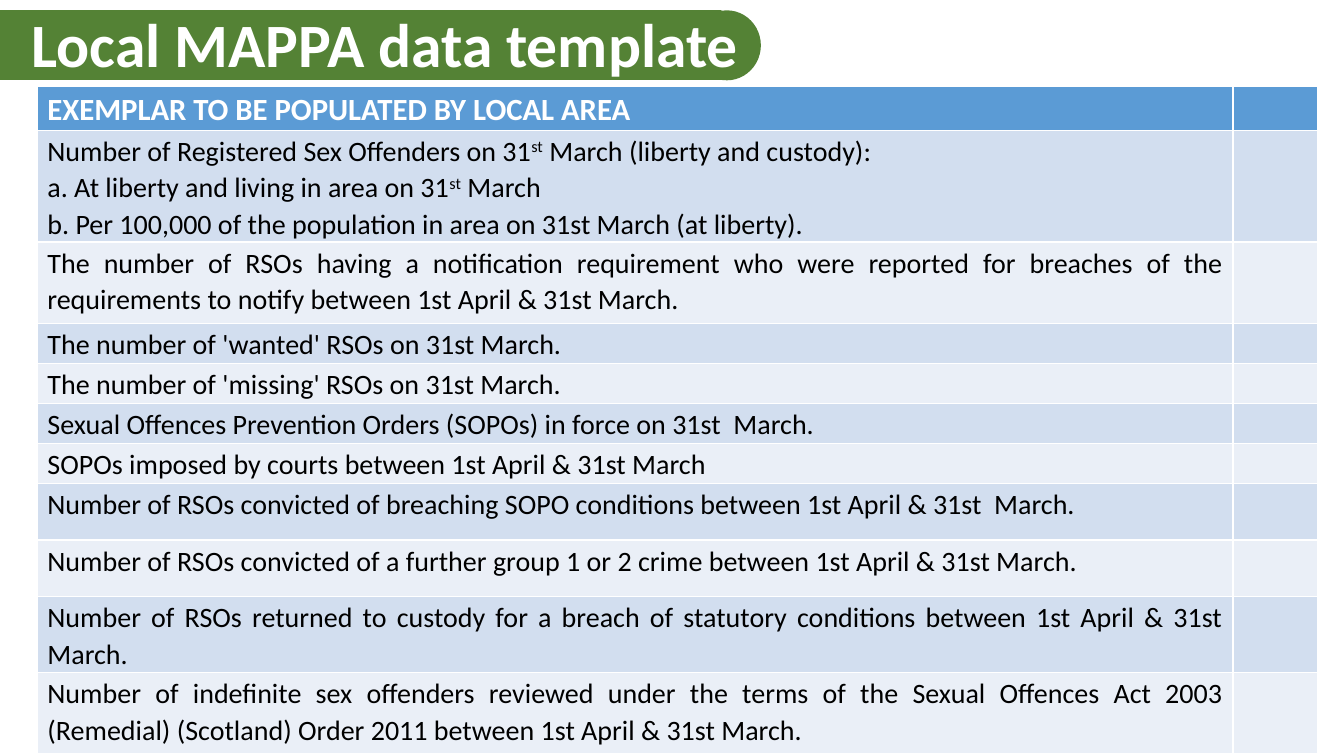
from pptx import Presentation
from pptx.dml.color import RGBColor
from pptx.enum.shapes import MSO_SHAPE as Preset
from pptx.enum.text import MSO_ANCHOR as Anchor, PP_ALIGN as Align
from pptx.util import Emu, Pt

# Content: ^ marks the edges of superscript text
TITLE = "Local MAPPA data template"
HEADING = "EXEMPLAR TO BE POPULATED BY LOCAL AREA"
MEASURES = [
    (106, ["Number of Registered Sex Offenders on 31^st^ March (liberty and custody): ",
           "a. At liberty and living in area on 31^st^ March ",
           "b. Per 100,000 of the population in area on 31st March (at liberty)."]),
    (81, ["The number of RSOs having a notification requirement who were reported "
          "for breaches of the requirements to notify between 1st April & 31st March."]),
    (37, ["The number of 'wanted' RSOs on 31st March."]),
    (37, ["The number of 'missing' RSOs on 31st March."]),
    (37, ["Sexual Offences Prevention Orders (SOPOs) in force on 31st  March."]),
    (37, ["SOPOs imposed by courts between 1st April & 31st March"]),
    (56, ["Number of RSOs convicted of breaching SOPO conditions between "
          "1st April & 31st  March."]),
    (56, ["Number of RSOs convicted of a further group 1 or 2 crime between "
          "1st April & 31st March."]),
    (72, ["Number of RSOs returned to custody for a breach of statutory conditions "
          "between 1st April & 31st March."]),
    (81, ["Number of indefinite sex offenders reviewed under the terms of the Sexual "
          "Offences Act 2003 (Remedial) (Scotland) Order 2011 between "
          "1st April & 31st March."]),
]
ROWS = [(42, [HEADING])] + MEASURES
COLUMNS = [1186, 84]
COLORS = {"banner": "548235", "header": "5B9BD5", "odd": "D2DEEF",
          "even": "EAEFF7", "white": "FFFFFF", "black": "000000"}
FONT = "Calibri"


def px(length):
    """100 px to the inch."""
    return Emu(length * 9144)


def color(name):
    return RGBColor.from_string(COLORS[name])


def style(para, size, color_name, bold, align, spacing):
    para.alignment = align
    para.line_spacing = spacing
    font = para.font
    font.name, font.size, font.bold = FONT, Pt(size), bold
    font.color.rgb = color(color_name)


def write_spans(para, text):
    for index, part in enumerate(text.split("^")):
        span = para.add_run()
        span.text = part
        if index % 2:
            span.font._element.set("baseline", "30000")


deck = Presentation()
deck.slide_width, deck.slide_height = px(1333), px(750)
page = deck.slides.add_slide(deck.slide_layouts[6])

# Banner with a rounded right end
banner = page.shapes.add_group_shape()
for preset, left, width in [(Preset.RECTANGLE, 0, 715), (Preset.OVAL, 688, 66)]:
    part = banner.shapes.add_shape(preset, px(left), px(11), px(width), px(68))
    part.shadow.inherit = False
    part.fill.solid()
    part.fill.fore_color.rgb = color("banner")
    part.line.color.rgb = color("banner")
    part.line.width = Pt(1)

# Title
box = page.shapes.add_textbox(px(-53), px(2), px(870), px(91))
frame = box.text_frame
frame.word_wrap = True
frame.vertical_anchor = Anchor.MIDDLE
title = frame.paragraphs[0]
title.text = TITLE
style(title, 44, "white", True, Align.CENTER, 0.9)

# Table: measures on the left, blank values on the right
table = page.shapes.add_table(len(ROWS), len(COLUMNS), px(37), px(86),
                              px(sum(COLUMNS)),
                              px(sum(height for height, _ in ROWS))).table
for column, width in zip(table.columns, COLUMNS):
    column.width = px(width)

for number, (height, lines) in enumerate(ROWS):
    table.rows[number].height = px(height)
    is_header = number == 0
    fill = "header" if is_header else "odd" if number % 2 else "even"
    for cell in table.rows[number].cells:
        cell.fill.solid()
        cell.fill.fore_color.rgb = color(fill)
        cell.margin_left = cell.margin_right = px(10)
        cell.margin_top = cell.margin_bottom = px(2)
    frame = table.cell(number, 0).text_frame
    for index, line in enumerate(lines):
        para = frame.add_paragraph() if index else frame.paragraphs[0]
        write_spans(para, line)
        style(para, 22 if is_header else 20, "white" if is_header else "black",
              is_header, Align.JUSTIFY, 1.07)

deck.save("out.pptx")
